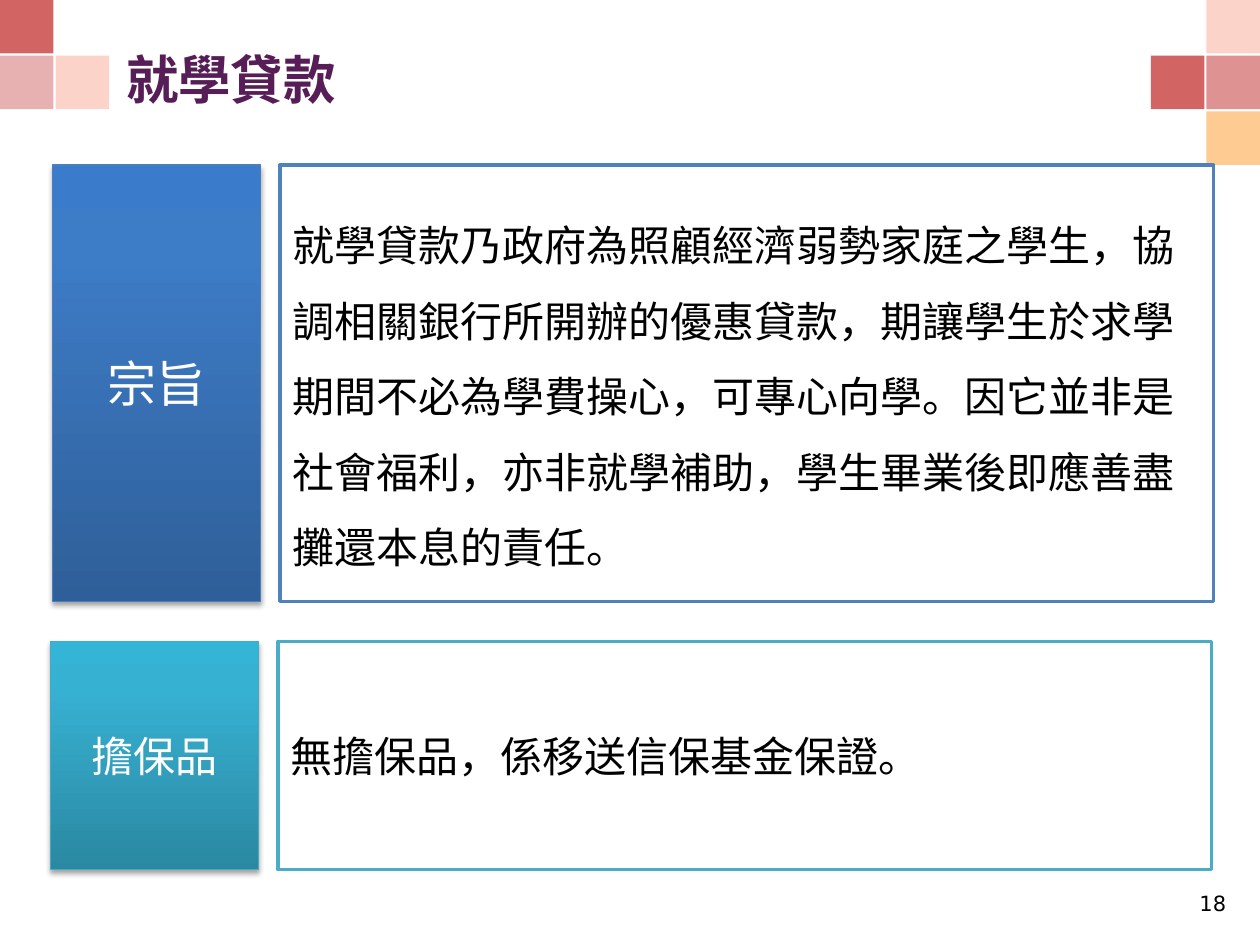
"""Build the student loan slide with its purpose and collateral panels."""
from lxml.etree import SubElement
from pptx import Presentation
from pptx.dml.color import RGBColor
from pptx.enum.shapes import MSO_SHAPE as Shape
from pptx.enum.text import MSO_ANCHOR as Anchor, MSO_AUTO_SIZE as AutoSize, PP_ALIGN as Align
from pptx.oxml.ns import qn
from pptx.util import Pt

TITLE = "就學貸款"
PAGE_NUMBER = "18"
PANELS = [
    dict(label="宗旨", label_size=28, left=30, top=94.3, height=249.3, spacing=1.5,
         edge="4B7EBC", border="4F81BD",
         stops=[(0, "2F5F99"), (80, "3D7CC7"), (100, "3A7CCB")],
         text="就學貸款乃政府為照顧經濟弱勢家庭之學生，協調相關銀行所開辦的優惠貸款，"
              "期讓學生於求學期間不必為學費操心，可專心向學。因它並非是社會福利，"
              "亦非就學補助，學生畢業後即應善盡攤還本息的責任。"),
    dict(label="擔保品", label_size=24, left=28.8, top=366.5, height=130.3, spacing=1,
         edge="46AAC5", border="4BACC6",
         stops=[(0, "2A88A2"), (80, "37B1D2"), (100, "34B4D6")],
         text="無擔保品，係移送信保基金保證。"),
]
THEME = dict(font="Noto Sans CJK SC", number_font="DejaVu Sans", title="571D57",
             light="FFFFFF", dark="000000", red="D26464", peach="FBA993",
             orange="FEA94C", title_size=30, body_size=24, number_size=12)
WIDTH, HEIGHT = 720, 540
SQUARE, PITCH = 30.6, 31.8
FAR_RIGHT = WIDTH - SQUARE
SQUARES = [
    (FAR_RIGHT, 2, "orange", 60), (FAR_RIGHT, 0, "peach", 50), (PITCH, 1, "peach", 50),
    (0, 0, "red", 100), (0, 1, "red", 50), (FAR_RIGHT, 1, "red", 70),
    (FAR_RIGHT - PITCH, 1, "red", 100),
]
LABEL_WIDTH, BODY_OFFSET, BODY_WIDTH = 118.8, 130, 533.5


def add_alpha(color, percent):
    SubElement(color, qn("a:alpha"), val=str(percent * 1000))


def add_rectangle(page, left, top, width, height):
    box = page.shapes.add_shape(Shape.RECTANGLE, Pt(left), Pt(top), Pt(width), Pt(height))
    box.shadow.inherit = False
    return box


def set_solid(box, color):
    box.fill.solid()
    box.fill.fore_color.rgb = RGBColor.from_string(color)


def set_line(box, color, width):
    box.line.color.rgb = RGBColor.from_string(color)
    box.line.width = Pt(width)


def set_gradient(box, stops):
    box.fill.gradient()
    box.fill.gradient_angle = 90
    stop_list = box.element.spPr.find(".//" + qn("a:gsLst"))
    stop_list.clear()
    for position, color in stops:
        stop = SubElement(stop_list, qn("a:gs"), pos=str(position * 1000))
        SubElement(stop, qn("a:srgbClr"), val=color)


def set_shadow(box):
    effects = box.element.spPr.find(qn("a:effectLst"))
    shadow = SubElement(effects, qn("a:outerShdw"), blurRad=str(Pt(3.1)),
                        dist=str(Pt(1.8)), dir="5400000", rotWithShape="0")
    add_alpha(SubElement(shadow, qn("a:srgbClr"), val=THEME["dark"]), 35)


def write(box, text, size, color, align=Align.LEFT, anchor=Anchor.MIDDLE,
          font="font", bold=False, spacing=1):
    frame = box.text_frame
    frame.word_wrap = True
    frame.auto_size = AutoSize.NONE
    frame.vertical_anchor = anchor
    para = frame.paragraphs[0]
    para.text = text
    para.alignment = align
    para.line_spacing = spacing
    para.font.size = Pt(size)
    para.font.bold = bold
    para.font.color.rgb = RGBColor.from_string(THEME[color])
    para.font.name = THEME[font]
    properties = para.runs[0].font
    properties.color.rgb = RGBColor.from_string(THEME[color])
    defaults = para._p.pPr.find(qn("a:defRPr"))
    SubElement(defaults, qn("a:ea"), typeface=THEME[font])


def add_square(page, left, row, color, opacity):
    square = add_rectangle(page, left, row * PITCH, SQUARE, SQUARE)
    set_solid(square, THEME[color])
    square.line.fill.background()
    if opacity < 100:
        add_alpha(square.element.spPr.find(".//" + qn("a:srgbClr")), opacity)


def add_panel(page, panel):
    left, top, height = panel["left"], panel["top"], panel["height"]
    label = add_rectangle(page, left, top, LABEL_WIDTH, height)
    set_gradient(label, panel["stops"])
    set_line(label, panel["edge"], 0.75)
    set_shadow(label)
    write(label, panel["label"], panel["label_size"], "light", Align.CENTER)
    body = add_rectangle(page, left + BODY_OFFSET, top, BODY_WIDTH, height)
    set_solid(body, THEME["light"])
    set_line(body, panel["border"], 2)
    write(body, panel["text"], THEME["body_size"], "dark", spacing=panel["spacing"])


def main():
    deck = Presentation()
    deck.slide_width, deck.slide_height = Pt(WIDTH), Pt(HEIGHT)
    page = deck.slides.add_slide(deck.slide_layouts[5])
    for square in SQUARES:
        add_square(page, *square)
    title = page.shapes.title
    title.left, title.top, title.width, title.height = Pt(64.8), Pt(22.3), Pt(583.2), Pt(44.6)
    write(title, TITLE, THEME["title_size"], "title", bold=True)
    for panel in PANELS:
        add_panel(page, panel)
    number = page.shapes.add_textbox(Pt(671.8), Pt(505.4), Pt(36), Pt(25.2))
    write(number, PAGE_NUMBER, THEME["number_size"], "dark", Align.RIGHT, Anchor.TOP,
          "number_font")
    deck.save("out.pptx")


if __name__ == "__main__":
    main()
